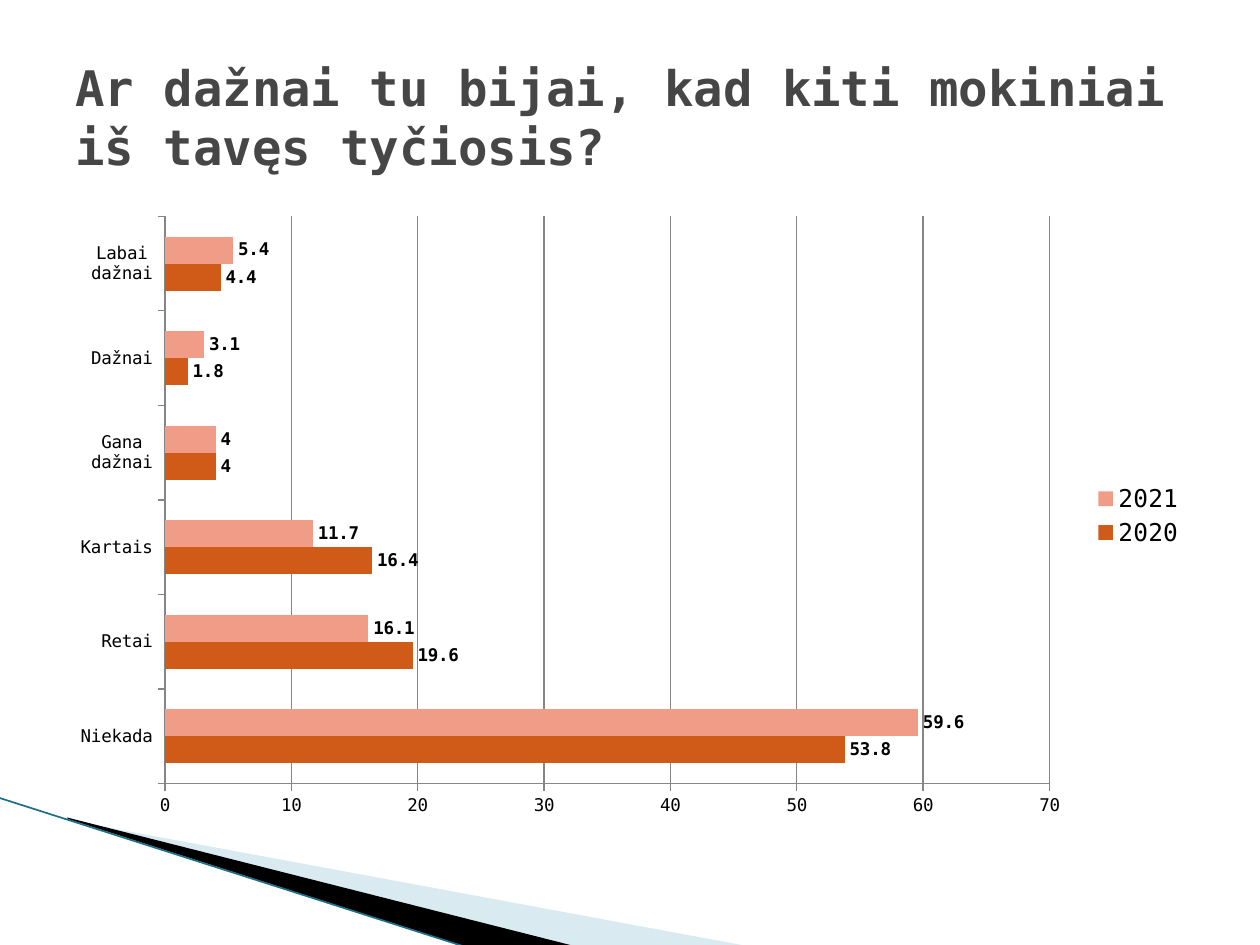
"""Builds a slide with a bar chart on how often pupils fear being mocked."""
import pptx
import pptx.chart.data
import pptx.dml.color
import pptx.enum.chart
import pptx.enum.shapes
import pptx.enum.text
import pptx.oxml
import pptx.oxml.ns
import pptx.util
from dataclasses import dataclass

Cm = pptx.util.Cm
Pt = pptx.util.Pt

TITLE = "Ar dažnai tu bijai, kad kiti mokiniai iš tavęs tyčiosis?"
CATEGORIES = ["Niekada", "Retai", "Kartais", "Gana dažnai", "Dažnai", "Labai dažnai"]
SERIES = [
    ("2020", (53.8, 19.6, 16.4, 4, 1.8, 4.4), "D05A17"),
    ("2021", (59.6, 16.1, 11.7, 4, 3.1, 5.4), "F09C87"),
]
WEDGES = [
    ([(1.4, 16.54), (15.11, 19.08), (11.58, 19.08), (1.4, 16.51)], "A0CBDC", 40),
    ([(1.35, 16.48), (11.61, 19.08), (9.45, 19.1), (1.37, 16.51)], "000000", 100),
]
EDGE = (-0.03, 16.08, 9.42, 19.1)
TITLE_BOX = (1.27, 0.76, 22.86, 3.18)
CHART_BOX = (1.27, 4.11, 22.86, 12.57)
PLOT = {"x": 0.09, "y": 0.02, "w": 0.78, "h": 0.91}


@dataclass(frozen=True)
class Theme:
    font: str = "DejaVu Sans Mono"
    title: str = "464646"
    text: str = "000000"
    axis: str = "868686"
    edge: str = "1B6F86"
    title_size: int = 28
    chart_size: int = 10
    legend_size: int = 14


THEME = Theme()


def rgb(value):
    return pptx.dml.color.RGBColor.from_string(value)


def xml(tag, **attrs):
    element = pptx.oxml.parse_xml(f"<{tag} {pptx.oxml.ns.nsdecls(tag.split(':')[0])}/>")
    for name, value in attrs.items():
        element.set(name, str(value))
    return element


def style(font, size, color, bold=False):
    font.name, font.size, font.bold = THEME.font, Pt(size), bold
    font.color.rgb = rgb(color)


def add_wedge(s, points, color, opacity):
    corners = [(Cm(x), Cm(y)) for x, y in points]
    builder = s.shapes.build_freeform(*corners[0])
    builder.add_line_segments(corners[1:])
    sp = builder.convert_to_shape()
    sp.shadow.inherit = False
    sp.line.fill.background()
    sp.fill.solid()
    sp.fill.fore_color.rgb = rgb(color)
    if opacity < 100:
        clr = sp.element.spPr.find(".//" + pptx.oxml.ns.qn("a:srgbClr"))
        clr.append(xml("a:alpha", val=opacity * 1000))


def add_edge(s):
    kind = pptx.enum.shapes.MSO_CONNECTOR.STRAIGHT
    line = s.shapes.add_connector(kind, *map(Cm, EDGE))
    line.line.color.rgb = rgb(THEME.edge)
    line.line.width = Pt(0.95)
    line.element.spPr.append(xml("a:effectLst"))


def place_plot(chart):
    area = chart.element.chart.plotArea
    for old in area.findall(pptx.oxml.ns.qn("c:layout")):
        area.remove(old)
    layout, manual = xml("c:layout"), xml("c:manualLayout")
    manual.append(xml("c:layoutTarget", val="inner"))
    for axis in "xy":
        manual.append(xml(f"c:{axis}Mode", val="edge"))
    for name, share in PLOT.items():
        manual.append(xml(f"c:{name}", val=share))
    layout.append(manual)
    area.insert(0, layout)


def add_chart(s):
    enum = pptx.enum.chart
    data = pptx.chart.data.CategoryChartData()
    data.categories = CATEGORIES
    for name, values, _ in SERIES:
        data.add_series(name, values)
    frame = s.shapes.add_chart(
        enum.XL_CHART_TYPE.BAR_CLUSTERED, *map(Cm, CHART_BOX), data)
    chart = frame.chart
    chart.has_title = False
    style(chart.font, THEME.chart_size, THEME.text)
    place_plot(chart)

    chart.has_legend = True
    chart.legend.position = enum.XL_LEGEND_POSITION.RIGHT
    chart.legend.include_in_layout = False
    style(chart.legend.font, THEME.legend_size, THEME.text)

    for axis in (chart.category_axis, chart.value_axis):
        axis.major_tick_mark = enum.XL_TICK_MARK.OUTSIDE
        axis.format.line.color.rgb = rgb(THEME.axis)
    value_axis = chart.value_axis
    value_axis.minimum_scale, value_axis.maximum_scale = 0, 70
    value_axis.major_unit = 10
    value_axis.major_gridlines.format.line.color.rgb = rgb(THEME.axis)

    plot = chart.plots[0]
    plot.gap_width, plot.overlap, plot.vary_by_categories = 150, 0, False
    for series, (_, _, color) in zip(plot.series, SERIES):
        series.format.fill.solid()
        series.format.fill.fore_color.rgb = rgb(color)
        labels = series.data_labels
        labels.show_value = True
        labels.position = enum.XL_LABEL_POSITION.OUTSIDE_END
        style(labels.font, THEME.chart_size, THEME.text, bold=True)


def add_title(s):
    tf = s.shapes.add_textbox(*map(Cm, TITLE_BOX)).text_frame
    tf.word_wrap = True
    tf.vertical_anchor = pptx.enum.text.MSO_ANCHOR.MIDDLE
    r = tf.paragraphs[0].add_run()
    r.text = TITLE
    style(r.font, THEME.title_size, THEME.title, bold=True)


def main():
    prs = pptx.Presentation()
    prs.slide_width, prs.slide_height = Cm(25.4), Cm(19.05)
    s = prs.slides.add_slide(prs.slide_layouts[6])
    for wedge in WEDGES:
        add_wedge(s, *wedge)
    add_edge(s)
    add_chart(s)
    add_title(s)
    prs.save("out.pptx")


if __name__ == "__main__":
    main()
